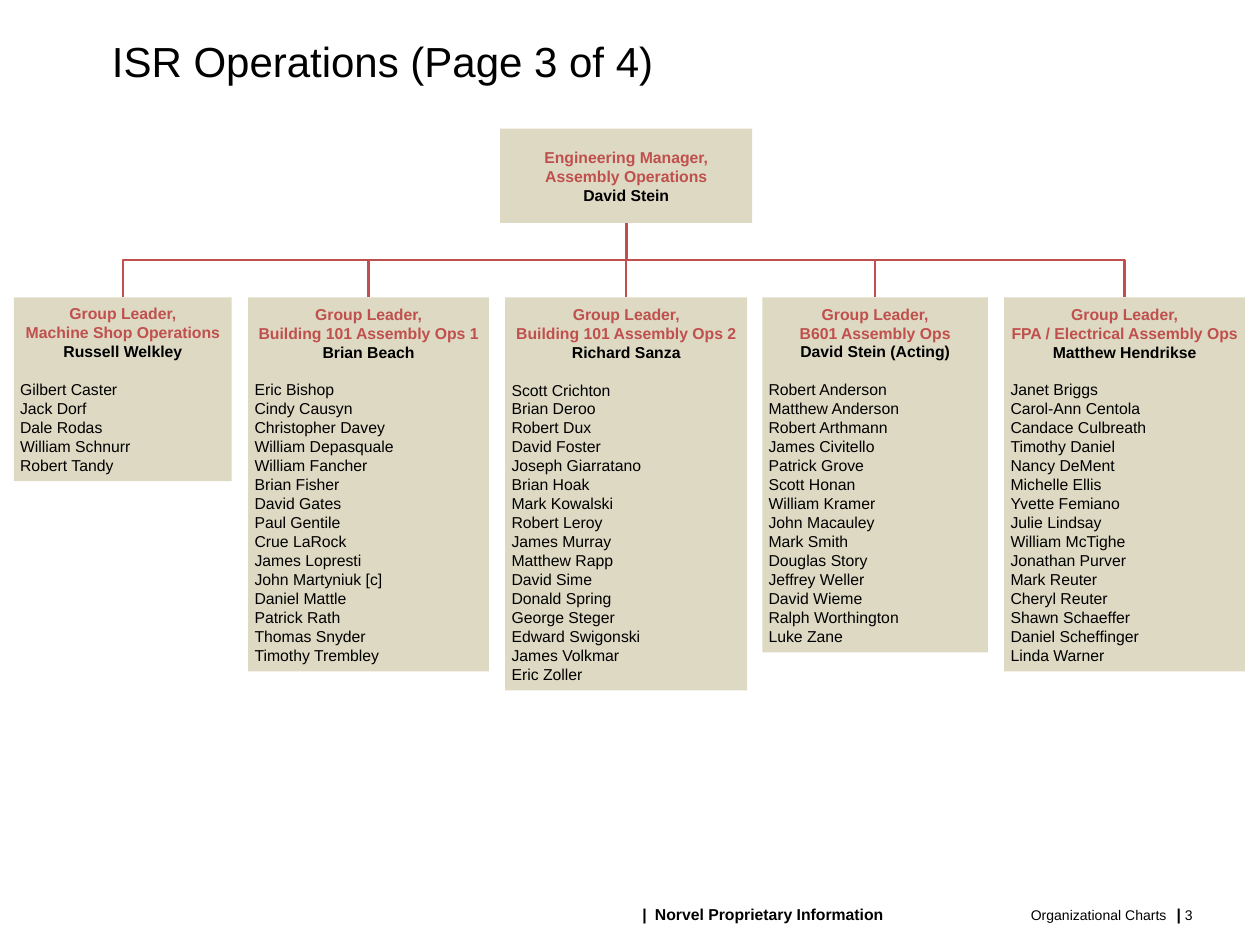
from pptx import Presentation
from pptx.dml.color import RGBColor
from pptx.enum.shapes import MSO_CONNECTOR as LINE, MSO_SHAPE as SHAPE
from pptx.enum.text import MSO_ANCHOR as ANCHOR, PP_ALIGN as ALIGN
from pptx.oxml.ns import qn
from pptx.util import Inches, Pt
from lxml import etree

BLACK, RED, SAND = "000000", "C0504D", "DDD9C3"
LINE_HEIGHT = 0.151
GROUP_TOP = 2.36

GROUPS = [
    (0.11, 1.73, "Machine Shop Operations", "Russell Welkley",
     ["Gilbert Caster", "Jack Dorf", "Dale Rodas", "William Schnurr", "Robert Tandy"]),
    (1.97, 1.91, "Building 101 Assembly Ops 1", "Brian Beach",
     ["Eric Bishop", "Cindy Causyn", "Christopher Davey", "William Depasquale",
      "William Fancher", "Brian Fisher", "David Gates", "Paul Gentile", "Crue LaRock",
      "James Lopresti", "John Martyniuk [c]", "Daniel Mattle", "Patrick Rath",
      "Thomas Snyder", "Timothy Trembley"]),
    (4.01, 1.92, "Building 101 Assembly Ops 2", "Richard Sanza",
     ["Scott Crichton", "Brian Deroo", "Robert Dux", "David Foster", "Joseph Giarratano",
      "Brian Hoak", "Mark Kowalski", "Robert Leroy", "James Murray", "Matthew Rapp",
      "David Sime", "Donald Spring", "George Steger", "Edward Swigonski",
      "James Volkmar", "Eric Zoller"]),
    (6.05, 1.79, "B601 Assembly Ops", "David Stein (Acting)",
     ["Robert Anderson", "Matthew Anderson", "Robert Arthmann", "James Civitello",
      "Patrick Grove", "Scott Honan", "William Kramer", "John Macauley", "Mark Smith",
      "Douglas Story", "Jeffrey Weller", "David Wieme", "Ralph Worthington", "Luke Zane"]),
    (7.97, 1.91, "FPA / Electrical Assembly Ops", "Matthew Hendrikse",
     ["Janet Briggs", "Carol-Ann Centola", "Candace Culbreath", "Timothy Daniel",
      "Nancy DeMent", "Michelle Ellis", "Yvette Femiano", "Julie Lindsay",
      "William McTighe", "Jonathan Purver", "Mark Reuter", "Cheryl Reuter",
      "Shawn Schaeffer", "Daniel Scheffinger", "Linda Warner"]),
]


def color(value):
    return RGBColor.from_string(value)


def style(font, size, bold=False, fill=BLACK):
    font.name = "Arial"
    font.size = Pt(size)
    font.bold = bold
    font.color.rgb = color(fill)


def add_label(page, left, top, width, height, text, size, bold=False, align=ALIGN.LEFT):
    box = page.shapes.add_textbox(Inches(left), Inches(top), Inches(width), Inches(height))
    frame = box.text_frame
    frame.word_wrap = True
    frame.vertical_anchor = ANCHOR.MIDDLE
    para = frame.paragraphs[0]
    para.text = text
    para.alignment = align
    style(para.font, size, bold)
    return para


def add_card(page, left, top, width, height, role, unit, leader, members=()):
    card = page.shapes.add_shape(
        SHAPE.RECTANGLE, Inches(left), Inches(top), Inches(width), Inches(height))
    card.shadow.inherit = False
    card.fill.solid()
    card.fill.fore_color.rgb = color(SAND)
    card.line.fill.background()
    frame = card.text_frame
    frame.word_wrap = True
    frame.vertical_anchor = ANCHOR.MIDDLE
    frame.margin_left = frame.margin_right = Inches(0.05)
    frame.margin_top = frame.margin_bottom = Inches(0.05)
    heading = [(role, RED), (unit, RED), (leader, BLACK)]
    lines = [(text, fill, True) for text, fill in heading]
    lines += [(name, BLACK, False) for name in members]
    for index, (text, fill, is_heading) in enumerate(lines):
        para = frame.paragraphs[0] if index == 0 else frame.add_paragraph()
        para.text = text
        para.alignment = ALIGN.CENTER if is_heading else ALIGN.LEFT
        if index == len(heading):
            para.space_before = Pt(LINE_HEIGHT * 72)
        style(para.font, 9, is_heading, fill)
    return card


def connect(page, manager, group):
    start_x, start_y = manager.left + manager.width // 2, manager.top + manager.height
    end_x, end_y = group.left + group.width // 2, group.top
    span, drop = end_x - start_x, end_y - start_y
    kind = LINE.ELBOW if span else LINE.STRAIGHT
    link = page.shapes.add_connector(kind, start_x, start_y, end_x, end_y)
    link.begin_connect(manager, 2)
    link.end_connect(group, 0)
    link.line.color.rgb = color(RED)
    link.line.width = Pt(1.5)
    properties = link.element.spPr
    etree.SubElement(properties, qn("a:effectLst"))
    if span:
        link.left = (start_x + end_x - drop) // 2
        link.top = (start_y + end_y - abs(span)) // 2
        link.width, link.height = drop, abs(span)
        turn = properties.find(qn("a:xfrm"))
        turn.set("rot", str((270 if span > 0 else 90) * 60000))
        turn.set("flipH", "1" if span > 0 else "0")


def add_chart_tree(page):
    manager = add_card(page, 3.97, 1.02, 2, 0.75,
                       "Engineering Manager,", "Assembly Operations", "David Stein")
    for left, width, unit, leader, members in GROUPS:
        height = 0.1 + LINE_HEIGHT * (len(members) + 4)
        group = add_card(page, left, GROUP_TOP, width, height,
                         "Group Leader,", unit, leader, members)
        connect(page, manager, group)


def add_footer(page, top, height):
    add_label(page, 5, top, 0.24, height, "|", 9, True)
    add_label(page, 5.1, top, 2.27, height, "Norvel Proprietary Information", 9, True)
    add_label(page, 7.08, top, 2.31, height, "Organizational Charts ", 8, align=ALIGN.RIGHT)
    para = add_label(page, 9.24, top, 0.73, height, "|", 9, True)
    number = para.add_run()
    number.text = " 3"
    style(number.font, 8)


def main():
    deck = Presentation()
    deck.slide_width, deck.slide_height = Inches(10), Inches(7.5)
    page = deck.slides.add_slide(deck.slide_layouts[6])
    add_label(page, 0.79, 0.19, 6.63, 0.59, "ISR Operations (Page 3 of 4)", 24)
    add_chart_tree(page)
    add_footer(page, 7.13, 0.26)
    deck.save("out.pptx")


if __name__ == "__main__":
    main()
